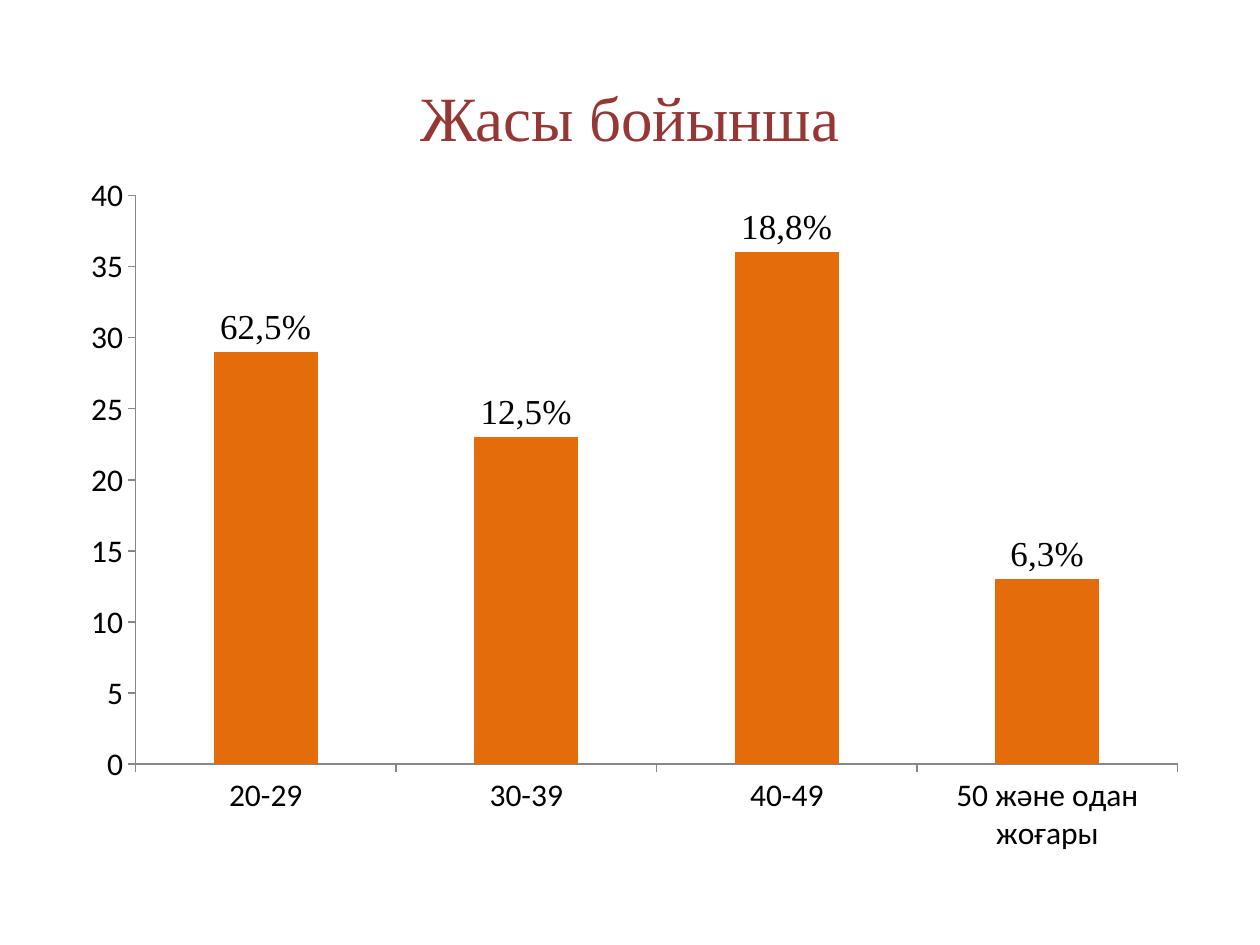
from lxml import etree
from pptx import Presentation
from pptx.chart.data import CategoryChartData as ChartData
from pptx.dml.color import RGBColor
from pptx.enum.chart import XL_CHART_TYPE as ChartType
from pptx.enum.chart import XL_LABEL_POSITION as LabelPosition
from pptx.enum.chart import XL_TICK_MARK as TickMark
from pptx.enum.text import MSO_ANCHOR as Anchor
from pptx.enum.text import PP_ALIGN as Align
from pptx.oxml.ns import qn
from pptx.util import Cm, Pt

MAROON = RGBColor(0x95, 0x37, 0x35)
ORANGE = RGBColor(0xE4, 0x6C, 0x0A)
BLACK = RGBColor(0, 0, 0)
GRAY = RGBColor(0x87, 0x87, 0x87)

AGES = {
    "20-29": (29, "62,5%"),
    "30-39": (23, "12,5%"),
    "40-49": (36, "18,8%"),
    "50 және одан жоғары": (13, "6,3%"),
}
PLOT_AREA = {"x": 0.064, "y": 0.03, "w": 0.919, "h": 0.807}


def apply(target, values):
    for name, value in values.items():
        setattr(target, name, value)


class SlideBuilder:
    heading = {"name": "Times New Roman", "size": Pt(36)}
    axis_text = {"name": "Calibri", "size": Pt(18)}
    label_text = {"name": "Times New Roman", "size": Pt(20)}

    def __init__(self, slide):
        self.slide = slide

    def style_font(self, font, values, color):
        apply(font, values)
        font.color.rgb = color

    def title(self, text, left, top, width, height):
        box = self.slide.shapes.add_textbox(left, top, width, height)
        frame = box.text_frame
        apply(frame, {"word_wrap": True, "vertical_anchor": Anchor.MIDDLE})
        paragraph = frame.paragraphs[0]
        paragraph.alignment = Align.CENTER
        run = paragraph.add_run()
        run.text = text
        self.style_font(run.font, self.heading, MAROON)

    def column_chart(self, ages, left, top, width, height):
        data = ChartData()
        data.categories = list(ages)
        data.add_series("Series 1", [value for value, _ in ages.values()])
        chart = self.slide.shapes.add_chart(
            ChartType.COLUMN_CLUSTERED, left, top, width, height, data
        ).chart
        apply(chart, {"has_legend": False, "has_title": False})
        self.style_font(chart.font, self.axis_text, BLACK)
        for axis in (chart.category_axis, chart.value_axis):
            apply(axis, {
                "has_major_gridlines": False,
                "major_tick_mark": TickMark.OUTSIDE,
                "minor_tick_mark": TickMark.NONE,
            })
            axis.format.line.width = Pt(0.75)
            axis.format.line.color.rgb = GRAY
        apply(chart.value_axis, {
            "minimum_scale": 0, "maximum_scale": 40, "major_unit": 5,
        })
        plot = chart.plots[0]
        apply(plot, {"gap_width": 150, "vary_by_categories": False})
        series = plot.series[0]
        series.format.fill.solid()
        series.format.fill.fore_color.rgb = ORANGE
        for index, (_, text) in enumerate(ages.values()):
            self.point_label(series.points[index].data_label, text)
        self.place_plot(chart)

    def point_label(self, label, text):
        paragraph = label.text_frame.paragraphs[0]
        run = paragraph.add_run()
        run.text = text
        self.style_font(run.font, self.label_text, BLACK)
        label.position = LabelPosition.OUTSIDE_END

    def place_plot(self, chart):
        plot_area = chart.plots[0]._element.getparent()
        for old_layout in plot_area.findall(qn("c:layout")):
            plot_area.remove(old_layout)
        layout = etree.Element(qn("c:layout"))
        manual = etree.SubElement(layout, qn("c:manualLayout"))
        settings = {"layoutTarget": "inner", "xMode": "edge", "yMode": "edge"}
        for tag, value in {**settings, **PLOT_AREA}.items():
            etree.SubElement(manual, qn(f"c:{tag}")).set("val", str(value))
        plot_area.insert(0, layout)


def main():
    presentation = Presentation()
    apply(presentation, {"slide_width": Cm(25.4), "slide_height": Cm(19.05)})
    slide = presentation.slides.add_slide(presentation.slide_layouts[6])
    builder = SlideBuilder(slide)
    builder.title("Жасы бойынша", Cm(1.27), Cm(0.76), Cm(22.86), Cm(3.18))
    builder.column_chart(AGES, Cm(1.27), Cm(3.52), Cm(22.86), Cm(14.2))
    presentation.save("out.pptx")


if __name__ == "__main__":
    main()
